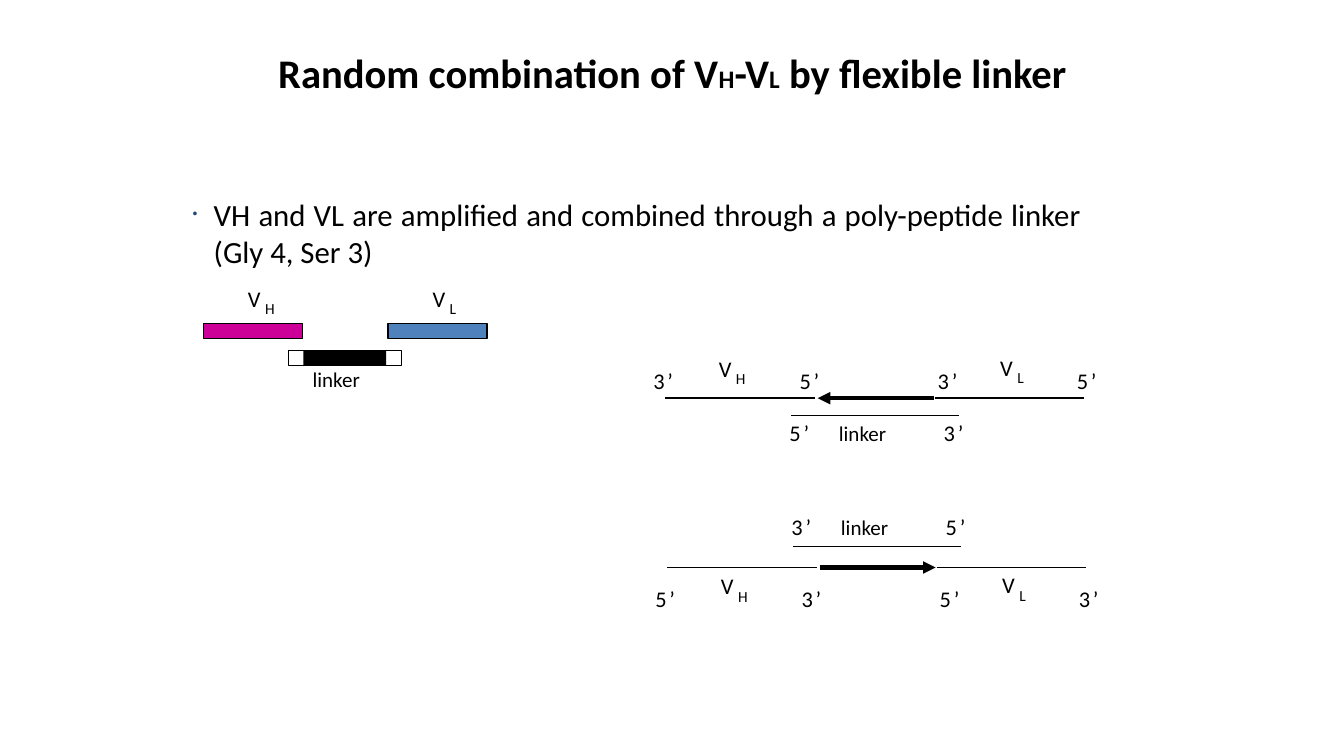
from pptx import Presentation
from pptx.dml.color import RGBColor
from pptx.enum.shapes import MSO_CONNECTOR, MSO_SHAPE
from pptx.enum.text import MSO_ANCHOR, MSO_AUTO_SIZE, PP_ALIGN
from pptx.oxml.ns import qn
from pptx.util import Inches, Pt
from lxml.etree import SubElement

BLACK = RGBColor(0x00, 0x00, 0x00)
WHITE = RGBColor(0xFF, 0xFF, 0xFF)
MAGENTA = RGBColor(0xCC, 0x00, 0x99)
BLUE = RGBColor(0x4F, 0x81, 0xBD)
BULLET_BLUE = "1F497D"
FONT = "Calibri"

# Width and height of a label box, by its text and size
LABEL_WIDTHS = {"V": 0.13, "H": 0.1, "L": 0.06, "’": 0.06, "linker": 0.48}
DIGIT_WIDTH = 0.11
LABEL_HEIGHTS = {16: 0.27, 15: 0.25, 11: 0.19}


def set_font(font, size, bold=False):
    font.name, font.size, font.bold = FONT, Pt(size), bold
    font.color.rgb = BLACK


def add_text_frame(slide, left, top, width, height, margins=(0, 0)):
    box = slide.shapes.add_textbox(Inches(left), Inches(top), Inches(width), Inches(height))
    frame = box.text_frame
    frame.word_wrap = True
    frame.margin_left = frame.margin_right = Inches(margins[0])
    frame.margin_top = frame.margin_bottom = Inches(margins[1])
    return frame


def add_label(slide, left, top, text, size=16):
    width = LABEL_WIDTHS.get(text, DIGIT_WIDTH)
    frame = add_text_frame(slide, left, top, width, LABEL_HEIGHTS[size])
    frame.word_wrap = False
    frame.auto_size = MSO_AUTO_SIZE.SHAPE_TO_FIT_TEXT
    paragraph = frame.paragraphs[0]
    paragraph.text = text
    set_font(paragraph.font, size)


def add_domain_label(slide, left, top, letter):
    add_label(slide, left, top, "V")
    add_label(slide, left + 0.17, top + 0.14, letter, 11)


def add_prime_label(slide, left, top, digit):
    add_label(slide, left, top, digit)
    add_label(slide, left + 0.14, top, "’")


def add_bar(slide, left, top, width, fill, line_width=None):
    bar = slide.shapes.add_shape(
        MSO_SHAPE.RECTANGLE, Inches(left), Inches(top), Inches(width), Inches(0.15))
    bar.shadow.inherit = False
    bar.fill.solid()
    bar.fill.fore_color.rgb = fill
    if line_width:
        bar.line.color.rgb = BLACK
        bar.line.width = Pt(line_width)
    else:
        bar.line.fill.background()


def add_line(slide, start, end, y, width=1, arrow=False):
    line = slide.shapes.add_connector(
        MSO_CONNECTOR.STRAIGHT, Inches(start), Inches(y), Inches(end), Inches(y))
    line.line.color.rgb = BLACK
    line.line.width = Pt(width)
    if arrow:
        SubElement(line.line._get_or_add_ln(), qn("a:tailEnd"), type="triangle")
    SubElement(line._element.spPr, qn("a:effectLst"))


def add_title(slide, left, top, width, height):
    frame = add_text_frame(slide, left, top, width, height, (0.09, 0.04))
    frame.vertical_anchor = MSO_ANCHOR.MIDDLE
    paragraph = frame.paragraphs[0]
    paragraph.alignment = PP_ALIGN.CENTER
    for text, size in (("Random combination of V", 29), ("H", 18), ("-V", 29),
                       ("L", 18), (" by flexible linker", 29)):
        run = paragraph.add_run()
        run.text = text
        set_font(run.font, size, bold=True)


def add_body(slide, left, top, width, height):
    frame = add_text_frame(slide, left, top, width, height)
    paragraph = frame.paragraphs[0]
    paragraph.text = ("VH and VL are amplified and combined through a "
                      "poly-peptide linker (Gly 4, Ser 3)")
    paragraph.alignment = PP_ALIGN.JUSTIFY
    # Hanging bullet
    properties = paragraph._p.get_or_add_pPr()
    properties.set("marL", str(Inches(0.21)))
    properties.set("indent", str(-Inches(0.21)))
    color = SubElement(properties, qn("a:buClr"))
    SubElement(color, qn("a:srgbClr"), val=BULLET_BLUE)
    SubElement(properties, qn("a:buSzPct"), val="45000")
    SubElement(properties, qn("a:buFont"), typeface="Arial")
    SubElement(properties, qn("a:buChar"), char="•")
    set_font(paragraph.font, 22)


def add_bar_diagram(slide, left, top):
    """Two domain bars bridged by the linker bar below them."""
    # Linker with white overlap ends
    add_bar(slide, left + 0.84, top + 0.65, 1.12, WHITE, 0.75)
    add_bar(slide, left + 0.99, top + 0.65, 0.82, BLACK)
    add_label(slide, left + 1.08, top + 0.81, "linker", 15)
    # Domains
    for offset, letter, fill in ((0, "H", MAGENTA), (1.83, "L", BLUE)):
        add_bar(slide, left + offset, top + 0.38, 0.98, fill, 1)
        add_domain_label(slide, left + offset + 0.44, top, letter)


def add_strand(slide, left, y, ends, linker_below):
    """Domain strand at height y, its linker strand and the extension arrow."""
    if linker_below:
        end_top, domain_top = y - 0.31, y - 0.43
        linker_y, linker_top = y + 0.17, y + 0.21
    else:
        end_top, domain_top = y + 0.18, y + 0.05
        linker_y, linker_top = y - 0.21, y - 0.54
    # Domain strands
    for offset in (0, 2.67):
        add_line(slide, left + offset, left + offset + 1.48, y)
    for offset, digit in zip((-0.12, 1.33, 2.7, 4.08), ends):
        add_prime_label(slide, left + offset, end_top, digit)
    add_domain_label(slide, left + 0.53, domain_top, "H")
    add_domain_label(slide, left + 3.32, domain_top - 0.01, "L")
    # Linker strand
    add_line(slide, left + 1.25, left + 2.91, linker_y)
    for offset, digit in zip((1.23, 2.76), ends[1:3]):
        add_prime_label(slide, left + offset, linker_top, digit)
    add_label(slide, left + 1.72, linker_top + 0.01, "linker", 15)
    # Extension arrow, running towards the 5’ end of the linker
    start, end = left + 1.51, left + 2.66
    if linker_below:
        start, end = end, start
    add_line(slide, start, end, y, 3, arrow=True)


def main():
    presentation = Presentation()
    presentation.slide_width = Inches(13.33)
    presentation.slide_height = Inches(7.5)
    slide = presentation.slides.add_slide(presentation.slide_layouts[6])

    add_title(slide, 2.17, 0.02, 9, 1.4)
    add_body(slide, 1.91, 1.94, 8.81, 0.74)
    add_bar_diagram(slide, 2.02, 2.83)
    add_strand(slide, 6.6, 3.95, "3535", linker_below=True)
    add_strand(slide, 6.62, 5.63, "5353", linker_below=False)

    presentation.save("out.pptx")


if __name__ == "__main__":
    main()
